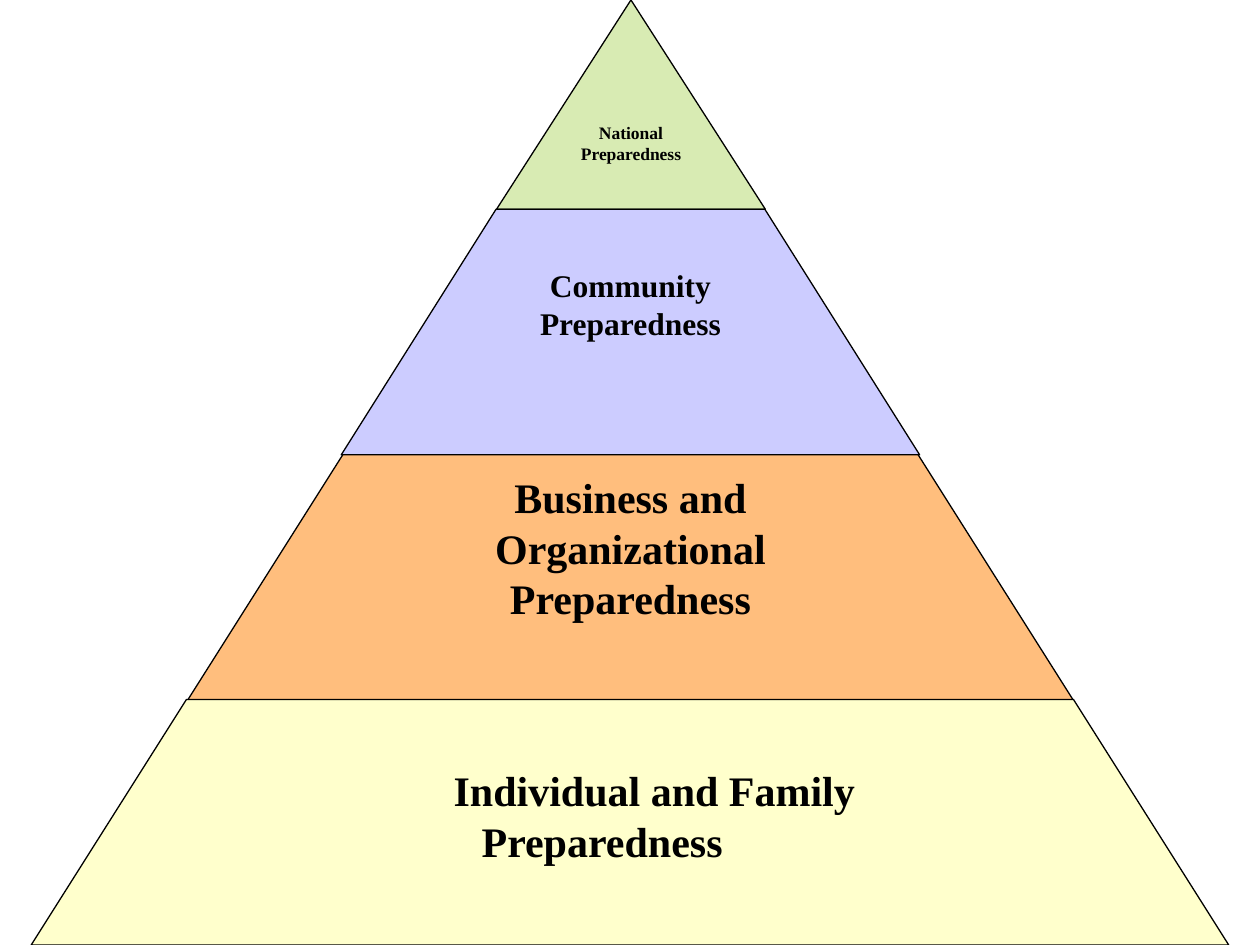
from pptx import Presentation
from pptx.dml.color import RGBColor as Rgb
from pptx.enum.text import MSO_ANCHOR as Anchor, PP_ALIGN as Align
from pptx.util import Cm, Pt

HEX = {
    "green": "D8EBB3",
    "lilac": "CCCCFF",
    "orange": "FFBE7D",
    "cream": "FFFFCC",
    "black": "000000",
}
FONT = "Times New Roman"

# Tiers: colour, centre x, top y, base y, half width at top and at base (cm),
# then text lines, size (pt), left, right and top margin, first indent (cm)
TIERS = [
    ("green", 12.72, 0, 4.22, 0, 2.71,
     ["National Preparedness"], 10, 1.4, 1.4, 2.46, 0),
    ("lilac", 12.71, 4.22, 9.17, 2.71, 5.83,
     ["Community", "Preparedness"], 18, 1, 1, 1.14, 0),
    ("orange", 12.71, 9.17, 14.12, 5.8, 8.93,
     ["Business and Organizational Preparedness"], 24, 5, 5, 0.34, 0),
    ("cream", 12.7, 14.1, 19.05, 8.94, 12.07,
     ["Individual and Family Preparedness"], 24, 5.8, 6.92, 1.32, 2.1),
]


def color(name):
    return Rgb.from_string(HEX[name])


def add_tier(group, hue, mid, top, base, upper, lower):
    """Draw one slice of the pyramid; the peak has no upper edge."""
    corners = [(mid - upper, top), (mid + upper, top),
               (mid + lower, base), (mid - lower, base)]
    points = [(Cm(x), Cm(y)) for x, y in dict.fromkeys(corners)]
    path = group.shapes.build_freeform(*points[0])
    path.add_line_segments(points[1:], close=True)
    shape = path.convert_to_shape()
    shape.shadow.inherit = False
    shape.fill.solid()
    shape.fill.fore_color.rgb = color(hue)
    shape.line.color.rgb = color("black")
    shape.line.width = Pt(0.75)
    return shape


def add_label(shape, lines, size, left, right, top, indent):
    """Write the bold, centred label inside a tier."""
    frame = shape.text_frame
    frame.word_wrap = True
    frame.vertical_anchor = Anchor.TOP
    frame.margin_left, frame.margin_right = Cm(left), Cm(right)
    frame.margin_top, frame.margin_bottom = Cm(top), 0
    frame.text = "\n".join(lines)
    for para in frame.paragraphs:
        para.alignment = Align.CENTER
        if indent:
            para._p.get_or_add_pPr().set("indent", str(Cm(indent)))
        font = para.font
        font.name, font.size, font.bold = FONT, Pt(size), True
        font.color.rgb = color("black")


def main():
    deck = Presentation()
    deck.slide_width, deck.slide_height = Cm(25.4), Cm(19.05)
    slide = deck.slides.add_slide(deck.slide_layouts[6])

    # Pyramid, from the peak down
    group = slide.shapes.add_group_shape()
    for tier in TIERS:
        shape = add_tier(group, *tier[:6])
        add_label(shape, *tier[6:])

    deck.save("out.pptx")


if __name__ == "__main__":
    main()
